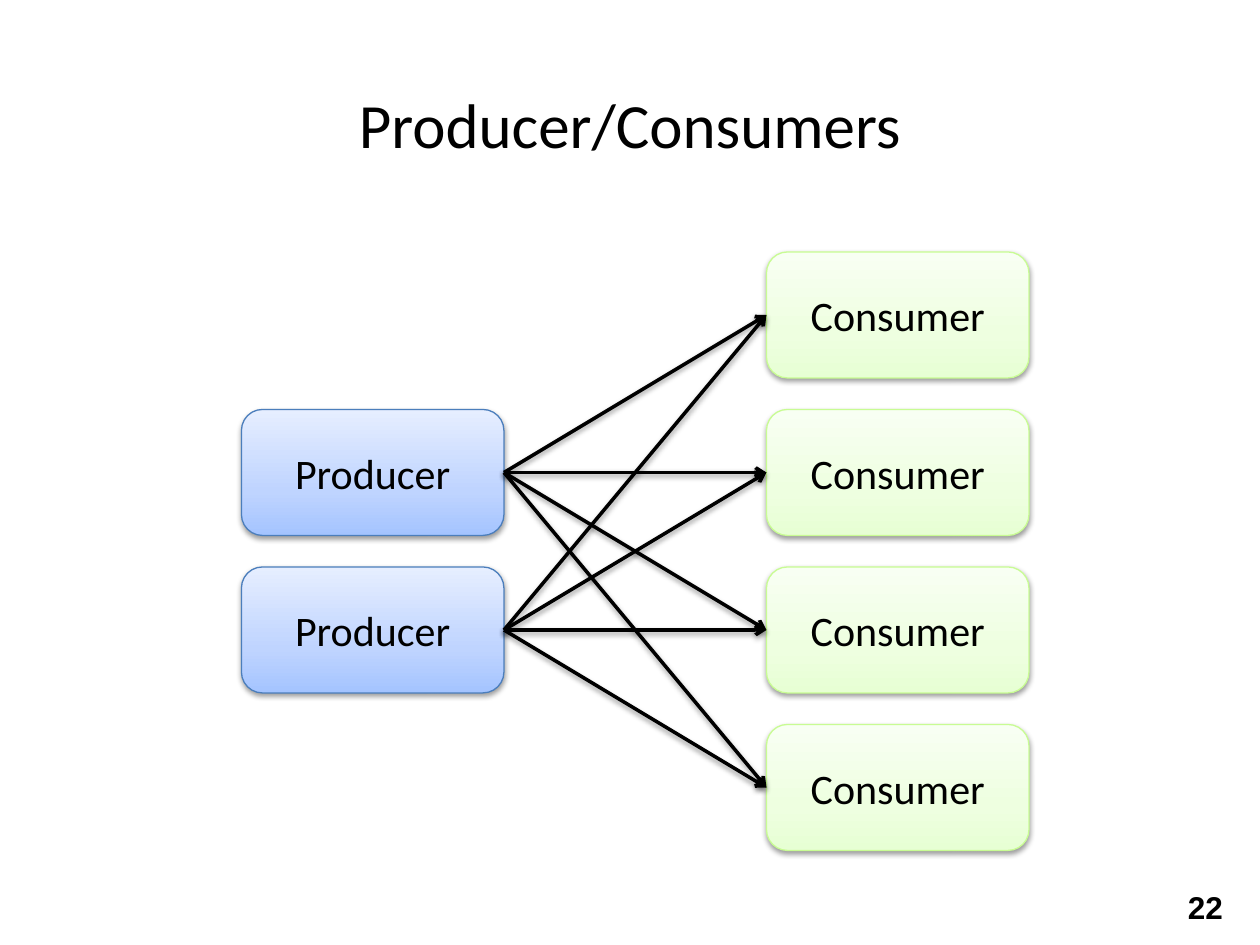
"""Build the Producer/Consumers slide: two producers feeding four consumers."""
import copy
import itertools

import lxml.etree
import pptx
import pptx.dml.color
import pptx.enum.shapes
import pptx.enum.text
import pptx.oxml.ns
import pptx.util


def add_text(shape, text, size, font="Calibri", bold=False, align="CENTER"):
    frame = shape.text_frame
    frame.word_wrap = True
    frame.vertical_anchor = pptx.enum.text.MSO_ANCHOR.MIDDLE
    paragraph = frame.paragraphs[0]
    paragraph.alignment = pptx.enum.text.PP_ALIGN[align]
    run = paragraph.add_run()
    run.text = text
    run.font.size = pptx.util.Pt(size)
    run.font.name = font
    run.font.bold = bold
    run.font.color.rgb = color("000000")


def add_shadow(shape):
    properties = shape._element.spPr
    effects = lxml.etree.SubElement(properties, qn("a:effectLst"))
    shadow = lxml.etree.SubElement(effects, qn("a:outerShdw"), blurRad="40000",
                                   dist="20000", dir="5400000", rotWithShape="0")
    black = lxml.etree.SubElement(shadow, qn("a:srgbClr"), val="000000")
    lxml.etree.SubElement(black, qn("a:alpha"), val="38000")


qn = pptx.oxml.ns.qn
color = pptx.dml.color.RGBColor.from_string

presentation = pptx.Presentation()
presentation.slide_width = pptx.util.Inches(10)
presentation.slide_height = pptx.util.Inches(7.5)
width, height = presentation.slide_width, presentation.slide_height
slide = presentation.slides.add_slide(presentation.slide_layouts[5])

title = slide.shapes.title
title.left, title.top = 0, int(height * 0.08)
title.width, title.height = width, int(height * 0.1)
add_text(title, "Producer/Consumers", 36)

column = width * 5 // 24
row = height // 6
first_top = pptx.util.Inches(2)
producer_left = pptx.util.Inches(4) - column
groups = [
    ("Producer", producer_left, (1, 2), "4B7EBC", ("A4C4FF", "BFD4FF", "E6EEFF")),
    ("Consumer", producer_left + 2 * column, range(4), "C8FC93", ("E7FFD4", "EEFFE0", "F8FFF3")),
]
boxes = {"Producer": [], "Consumer": []}
for label, left, rows, outline, gradient in groups:
    for index in rows:
        box = slide.shapes.add_shape(
            pptx.enum.shapes.MSO_SHAPE.ROUNDED_RECTANGLE,
            left, first_top + index * row, column, int(row * 0.8))
        box.fill.gradient()
        box.fill.gradient_angle = 90
        stop_list = box._element.spPr.find(".//" + qn("a:gsLst"))
        stop_list.append(copy.deepcopy(stop_list[-1]))
        for stop, position, shade in zip(box.fill.gradient_stops, (0, 0.35, 1), gradient):
            stop.position = position
            stop.color.rgb = color(shade)
        box.line.color.rgb = color(outline)
        box.line.width = pptx.util.Pt(0.75)
        add_shadow(box)
        add_text(box, label, 24)
        boxes[label].append(box)

for producer, consumer in itertools.product(boxes["Producer"], boxes["Consumer"]):
    arrow = slide.shapes.add_connector(pptx.enum.shapes.MSO_CONNECTOR.STRAIGHT, 0, 0, 0, 0)
    arrow.begin_connect(producer, 3)
    arrow.end_connect(consumer, 1)
    arrow.line.color.rgb = color("000000")
    arrow.line.width = pptx.util.Pt(2)
    lxml.etree.SubElement(arrow.line._get_or_add_ln(), qn("a:tailEnd"), type="arrow")
    add_shadow(arrow)

page_number = slide.shapes.add_textbox(
    pptx.util.Inches(9.33), pptx.util.Inches(7), pptx.util.Inches(0.58), pptx.util.Inches(0.4))
add_text(page_number, "22", 18, "Arial", True, "LEFT")

presentation.save("out.pptx")
